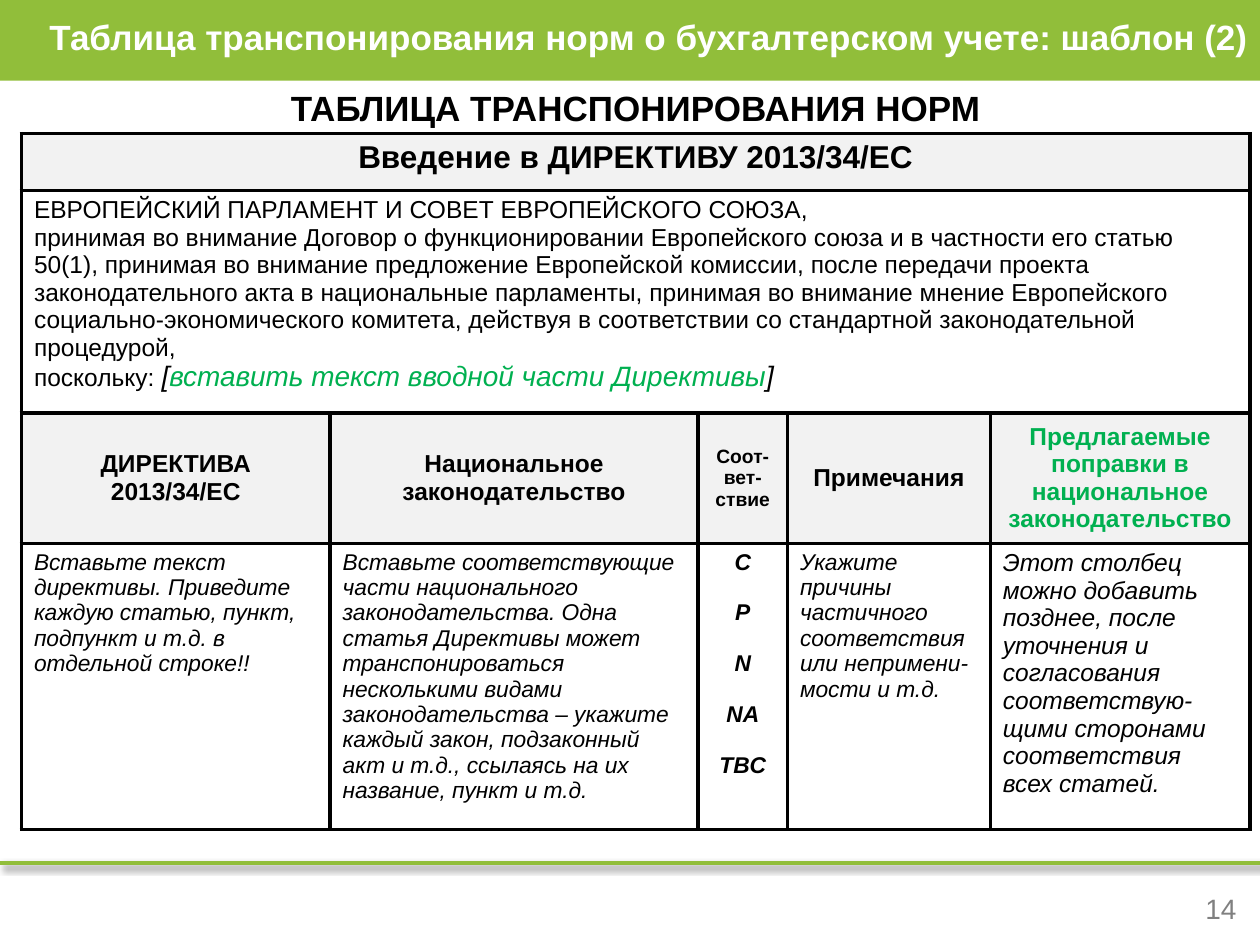
from dataclasses import dataclass

from lxml.etree import SubElement
from pptx import Presentation
from pptx.dml.color import RGBColor as RGB
from pptx.enum.shapes import MSO_CONNECTOR as CONN, MSO_SHAPE as SHAPE
from pptx.enum.text import MSO_ANCHOR as ANCHOR, PP_ALIGN as ALIGN
from pptx.oxml.ns import qn
from pptx.util import Inches, Pt


@dataclass(frozen=True)
class Theme:
    font: str = "Arial"
    brand: str = "91BE3A"
    accent: str = "00B050"
    ink: str = "000000"
    paper: str = "FFFFFF"
    shade: str = "F2F2F2"
    muted: str = "808080"
    title: int = 20
    heading: int = 18
    lead: int = 16
    body: int = 14
    note: int = 13
    small: int = 11
    border: float = 2.25
    rule: int = 2
    gap: float = 14.5


class SlideBuilder:
    """Draws themed elements on the current slide."""

    def __init__(self, theme, slide):
        self.theme = theme
        self.slide = slide

    def style(self, r, size, color=None, bold=False, italic=False):
        f = r.font
        f.name, f.size, f.bold, f.italic = self.theme.font, Pt(size), bold, italic
        f.color.rgb = RGB.from_string(color or self.theme.ink)

    def bar(self, x, y, w, h, color):
        sp = self.slide.shapes.add_shape(SHAPE.RECTANGLE, *map(Inches, (x, y, w, h)))
        sp.shadow.inherit = False
        sp.fill.solid()
        sp.fill.fore_color.rgb = RGB.from_string(color)
        sp.line.fill.background()

    def rule(self, x1, y, x2, color):
        ln = self.slide.shapes.add_connector(CONN.STRAIGHT, *map(Inches, (x1, y, x2, y)))
        ln.line.color.rgb = RGB.from_string(color)
        ln.line.width = Pt(self.theme.rule)
        effects = SubElement(ln._element.spPr, qn("a:effectLst"))
        shadow = SubElement(effects, qn("a:outerShdw"), blurRad=str(Pt(4)),
                            dist=str(Pt(3)), dir=str(45 * 60000), rotWithShape="0")
        clr = SubElement(shadow, qn("a:srgbClr"), val=self.theme.ink)
        SubElement(clr, qn("a:alpha"), val="40000")

    def text(self, x, y, w, h, text, size, color, bold=False,
             align=ALIGN.CENTER, anchor=ANCHOR.MIDDLE):
        tf = self.slide.shapes.add_textbox(*map(Inches, (x, y, w, h))).text_frame
        tf.word_wrap = True
        tf.vertical_anchor = anchor
        tf.text = text
        p = tf.paragraphs[0]
        p.alignment = align
        self.style(p.runs[0], size, color, bold)

    def table(self, x, y, cols, rows):
        sp = self.slide.shapes.add_table(len(rows), len(cols), Inches(x), Inches(y),
                                         Inches(sum(cols)), Inches(sum(rows)))
        tbl = sp.table
        tbl.first_row = tbl.horz_banding = False
        for col, w in zip(tbl.columns, cols):
            col.width = Inches(w)
        for row, h in zip(tbl.rows, rows):
            row.height = Inches(h)
        for cell in tbl.iter_cells():
            self.borders(cell)
        return tbl

    def borders(self, cell):
        tc_pr = cell._tc.get_or_add_tcPr()
        for side in ("a:lnL", "a:lnR", "a:lnT", "a:lnB"):
            ln = SubElement(tc_pr, qn(side), w=str(Pt(self.theme.border)))
            fill = SubElement(ln, qn("a:solidFill"))
            SubElement(fill, qn("a:srgbClr"), val=self.theme.ink)

    def cell(self, cell, text, size, fill, align=ALIGN.LEFT,
             anchor=ANCHOR.TOP, gap=0, **look):
        cell.fill.solid()
        cell.fill.fore_color.rgb = RGB.from_string(fill)
        cell.vertical_anchor = anchor
        tf = cell.text_frame
        tf.text = text
        for i, p in enumerate(tf.paragraphs):
            p.alignment = align
            if i and gap:
                p.space_before = Pt(gap)
            for r in p.runs:
                self.style(r, size, **look)


def main():
    t = Theme()
    prs = Presentation()
    prs.slide_width, prs.slide_height = Inches(10), Inches(7.5)
    s = SlideBuilder(t, prs.slides.add_slide(prs.slide_layouts[6]))

    s.bar(0, 0, 10, 0.64, t.brand)
    s.rule(0, 6.85, 10, t.brand)
    s.text(0.17, -0.06, 9.96, 0.7,
           "Таблица транспонирования норм о бухгалтерском учете: шаблон (2)",
           t.title, t.paper, bold=True)
    s.text(9.32, 7.01, 0.59, 0.4, "14", t.lead, t.muted, align=ALIGN.RIGHT)
    s.text(0.17, 0.64, 9.75, 0.42, "ТАБЛИЦА ТРАНСПОНИРОВАНИЯ НОРМ",
           t.title, t.ink, bold=True, anchor=ANCHOR.TOP)

    tbl = s.table(0.17, 1.06, (2.45, 2.92, 0.71, 1.61, 2.06), (0.45, 1.5, 0.85, 2.16))
    for row in (0, 1):
        tbl.cell(row, 0).merge(tbl.cell(row, 4))
    s.cell(tbl.cell(0, 0), "Введение в ДИРЕКТИВУ 2013/34/ЕС", t.heading, t.shade,
           ALIGN.CENTER, bold=True)

    preamble = tbl.cell(1, 0)
    s.cell(preamble, "\n".join((
        "ЕВРОПЕЙСКИЙ ПАРЛАМЕНТ И СОВЕТ ЕВРОПЕЙСКОГО СОЮЗА,",
        "принимая во внимание Договор о функционировании Европейского союза и в частности "
        "его статью 50(1), принимая во внимание предложение Европейской комиссии, после "
        "передачи проекта законодательного акта в национальные парламенты, принимая во "
        "внимание мнение Европейского социально-экономического комитета, действуя в "
        "соответствии со стандартной законодательной процедурой,",
        "поскольку: ")), t.body, t.paper)
    for text, color in (("[", t.ink), ("вставить текст вводной части Директивы", t.accent),
                        ("]", t.ink)):
        r = preamble.text_frame.paragraphs[-1].add_run()
        r.text = text
        s.style(r, t.lead, color, italic=True)

    headers = (
        ("ДИРЕКТИВА 2013/34/ЕС", t.body, t.ink),
        ("Национальное законодательство", t.body, t.ink),
        ("Соот-вет-ствие", t.small, t.ink),
        ("Примечания", t.body, t.ink),
        ("Предлагаемые поправки в национальное законодательство", t.body, t.accent),
    )
    for col, (text, size, color) in enumerate(headers):
        s.cell(tbl.cell(2, col), text, size, t.shade, ALIGN.CENTER, ANCHOR.MIDDLE,
               color=color, bold=True)

    guidance = (
        (0, t.note, "Вставьте текст директивы. Приведите каждую статью, пункт, подпункт "
                    "и т.д. в отдельной строке!!"),
        (1, t.note, "Вставьте соответствующие части национального законодательства. Одна "
                    "статья Директивы может транспонироваться несколькими видами "
                    "законодательства – укажите каждый закон, подзаконный акт и т.д., "
                    "ссылаясь на их название, пункт и т.д."),
        (3, t.note, "Укажите причины частичного соответствия или непримени-мости и т.д."),
        (4, t.body, "Этот столбец можно добавить позднее, после уточнения и согласования "
                    "соответствую-щими сторонами соответствия всех статей."),
    )
    for col, size, text in guidance:
        s.cell(tbl.cell(3, col), text, size, t.paper, italic=True)
    s.cell(tbl.cell(3, 2), "\n".join(("C", "P", "N", "NA", "TBC")), t.note, t.paper,
           ALIGN.CENTER, gap=t.gap, bold=True, italic=True)

    prs.save("out.pptx")


if __name__ == "__main__":
    main()
